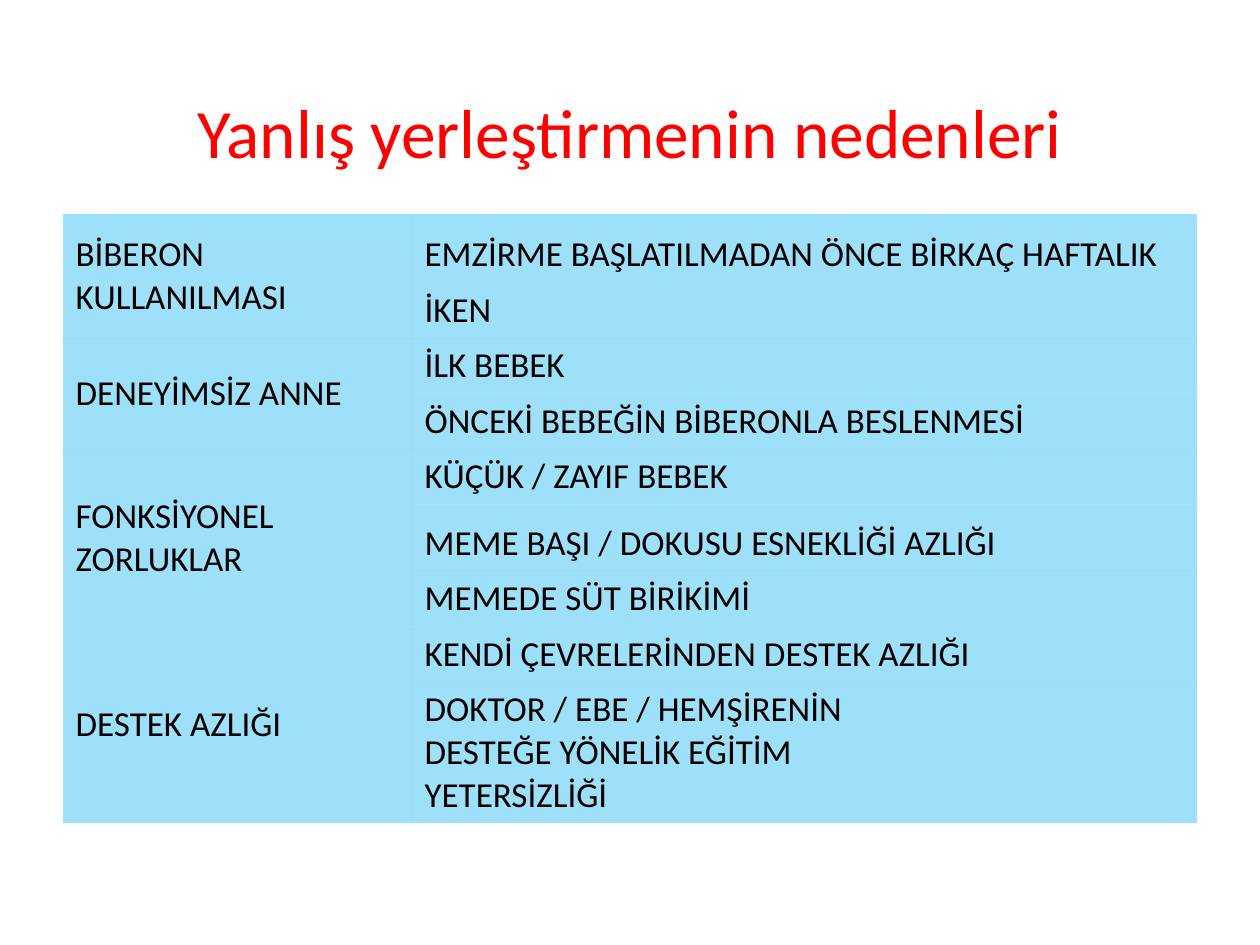
from dataclasses import dataclass

from lxml import etree
from pptx import Presentation, util as u
from pptx.dml.color import RGBColor
from pptx.enum import text
from pptx.oxml.ns import qn

EMU_PER_PX = 914400 / 126
COLORS = {"title": "FF0000", "body": "000000", "cell": "00B0F0"}
CELL_OPACITY = 38
PLAIN_TABLE_STYLE = "{2D5ABB26-0587-4C30-8999-92F81FD0307C}"
ROW_HEIGHT = 52
COLUMN_WIDTHS = (349, 785)


@dataclass(frozen=True)
class Detail:
    wording: str
    line_spacing: float = 1.0


@dataclass(frozen=True)
class Cause:
    heading: str
    details: tuple[Detail, ...]


CAUSES = (
    Cause("BİBERON KULLANILMASI", (
        Detail("EMZİRME BAŞLATILMADAN ÖNCE BİRKAÇ HAFTALIK İKEN", 1.3),
    )),
    Cause("DENEYİMSİZ ANNE", (
        Detail("İLK BEBEK"),
        Detail("ÖNCEKİ BEBEĞİN BİBERONLA BESLENMESİ"),
    )),
    Cause("FONKSİYONEL ZORLUKLAR", (
        Detail("KÜÇÜK / ZAYIF BEBEK"),
        Detail("MEME BAŞI / DOKUSU ESNEKLİĞİ AZLIĞI", 1.25),
        Detail("MEMEDE SÜT BİRİKİMİ"),
    )),
    Cause("DESTEK AZLIĞI", (
        Detail("KENDİ ÇEVRELERİNDEN DESTEK AZLIĞI"),
        Detail("DOKTOR / EBE / HEMŞİRENİN\nDESTEĞE YÖNELİK EĞİTİM\nYETERSİZLİĞİ"),
    )),
)


def px(length: int) -> u.Emu:
    return u.Emu(round(length * EMU_PER_PX))


def apply_format(target, values: dict) -> None:
    for attribute, value in values.items():
        setattr(target, attribute, value)


def format_font(font, size: float, color: str) -> None:
    apply_format(font, {"name": "Calibri", "size": u.Pt(size), "bold": False})
    font.color.rgb = RGBColor.from_string(COLORS[color])


def fill_cell(cell) -> None:
    cell.fill.solid()
    cell.fill.fore_color.rgb = RGBColor.from_string(COLORS["cell"])
    tint = cell.fill._xPr.find(qn("a:solidFill"))[0]
    etree.SubElement(tint, qn("a:alpha"), val=str(CELL_OPACITY * 1000))


def write_cell(cell, detail: Detail) -> None:
    cell.text = detail.wording
    cell.vertical_anchor = text.MSO_ANCHOR.MIDDLE
    for paragraph in cell.text_frame.paragraphs:
        paragraph.line_spacing = detail.line_spacing
        for run in paragraph.runs:
            format_font(run.font, 20, "body")


def add_title(slide, wording: str) -> None:
    title = slide.shapes.title
    apply_format(title, {"left": px(63), "top": px(96), "width": px(1134), "height": px(69)})
    frame = title.text_frame
    frame.text = wording
    apply_format(frame, {
        "word_wrap": True,
        "auto_size": text.MSO_AUTO_SIZE.NONE,
        "vertical_anchor": text.MSO_ANCHOR.MIDDLE,
    })
    heading = frame.paragraphs[0]
    heading.alignment = text.PP_ALIGN.CENTER
    format_font(heading.runs[0].font, 39.6, "title")


def add_causes(slide, causes: tuple[Cause, ...]) -> None:
    row_count = sum(len(cause.details) for cause in causes)
    frame = slide.shapes.add_table(
        row_count, len(COLUMN_WIDTHS), px(63), px(214),
        px(sum(COLUMN_WIDTHS)), px(ROW_HEIGHT * row_count),
    )
    table = frame.table
    apply_format(table, {"first_row": False, "horz_banding": False})
    table._tbl.tblPr.find(qn("a:tableStyleId")).text = PLAIN_TABLE_STYLE
    for column, width in zip(table.columns, COLUMN_WIDTHS):
        column.width = px(width)
    for cell in table.iter_cells():
        fill_cell(cell)

    first = 0
    for cause in causes:
        last = first + len(cause.details) - 1
        if last > first:
            table.cell(first, 0).merge(table.cell(last, 0))
        write_cell(table.cell(first, 0), Detail(cause.heading))
        for row, detail in enumerate(cause.details, first):
            write_cell(table.cell(row, 1), detail)
        first = last + 1


def main() -> None:
    deck = Presentation()
    apply_format(deck, {"slide_width": px(1260), "slide_height": px(945)})
    slide = deck.slides.add_slide(deck.slide_layouts[5])
    add_title(slide, "Yanlış yerleştirmenin nedenleri")
    add_causes(slide, CAUSES)
    deck.save("out.pptx")


if __name__ == "__main__":
    main()
